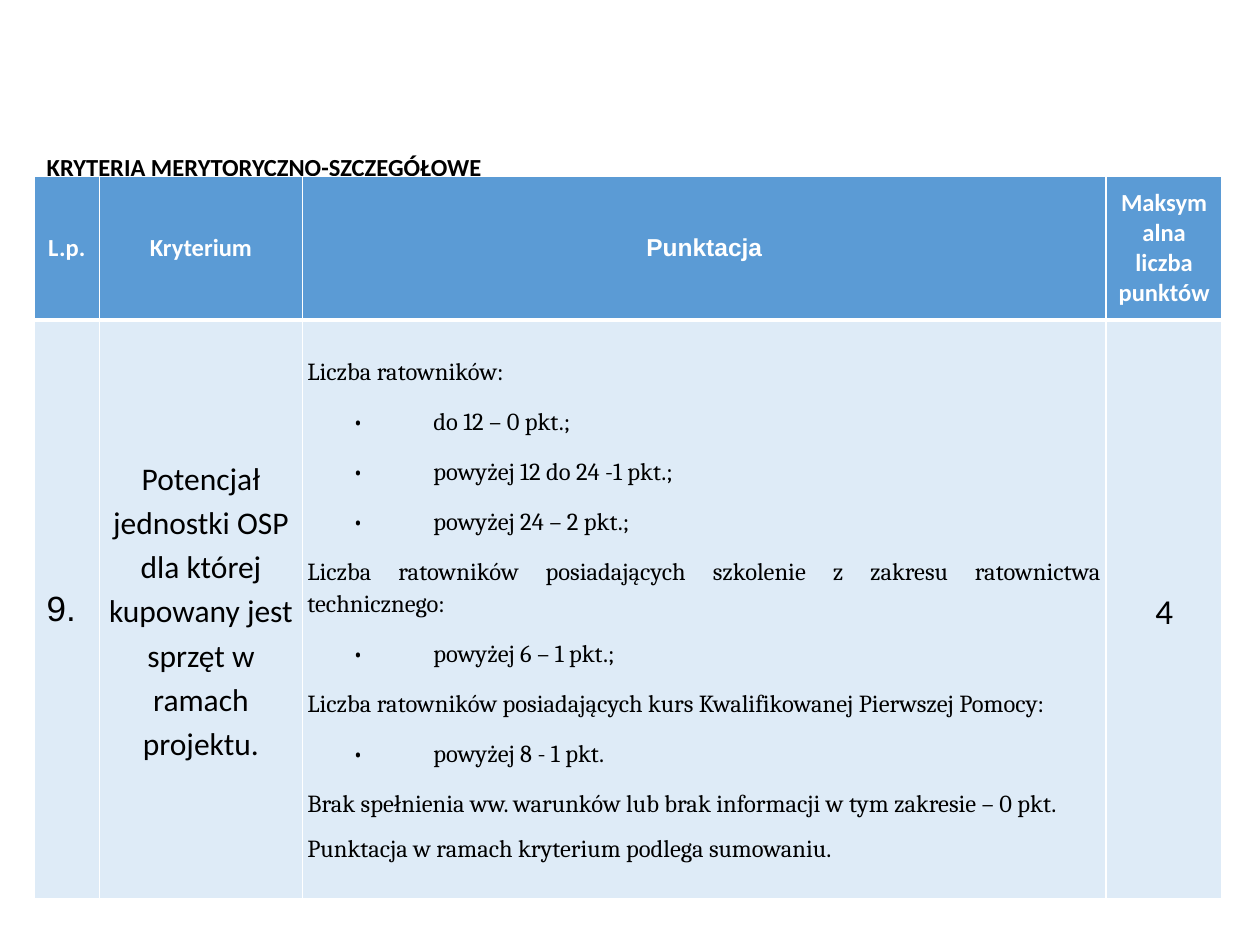
from lxml import etree
from pptx import Presentation
from pptx.dml.color import RGBColor
from pptx.enum import text as t
from pptx.oxml.ns import qn
from pptx.util import Inches, Pt

# Content
HEADING = "KRYTERIA MERYTORYCZNO-SZCZEGÓŁOWE"
HEADERS = ["L.p.", "Kryterium", "Punktacja", "Maksymalna liczba punktów"]
NUMBER = "9."
CRITERION = "Potencjał jednostki OSP dla której kupowany jest sprzęt w ramach projektu."
MAX_POINTS = "4"
SCORING = [  # (statement, bulleted thresholds)
    ("Liczba ratowników:",
     ["do 12 – 0 pkt.;", "powyżej 12 do 24 -1 pkt.;", "powyżej 24 – 2 pkt.;"]),
    ("Liczba ratowników posiadających szkolenie z zakresu ratownictwa technicznego:",
     ["powyżej 6 – 1 pkt.;"]),
    ("Liczba ratowników posiadających kurs Kwalifikowanej Pierwszej Pomocy:",
     ["powyżej 8 - 1 pkt."]),
    ("Brak spełnienia ww. warunków lub brak informacji w tym zakresie – 0 pkt.", []),
]
SUMMARY = "Punktacja w ramach kryterium podlega sumowaniu."

COLORS = {"header": "5B9BD5", "body": "DEEBF7", "white": "FFFFFF", "black": "000000"}
COLUMNS = [0.52, 1.61, 6.38, 0.92]
ROWS = [1.14, 4.59]
LEFT, TOP = 0.27, 1.4
LEFT_AL, CENTER, JUSTIFY = t.PP_ALIGN.LEFT, t.PP_ALIGN.CENTER, t.PP_ALIGN.JUSTIFY


def write(frame, text, size=14, font="Calibri", color="black", bold=False,
          align=LEFT_AL, spacing=1.0, after=0, bullet=False):
    """Fill the empty first paragraph, or add one, and format it."""
    first = frame.paragraphs[0]
    paragraph = frame.add_paragraph() if first.runs else first
    if bullet:
        props = paragraph._p.get_or_add_pPr()
        props.set("marL", str(Inches(1)))
        props.set("indent", str(Inches(-0.64)))
        etree.SubElement(props, qn("a:buFont")).set("typeface", font)
        etree.SubElement(props, qn("a:buChar")).set("char", "•")
    paragraph.alignment = align
    paragraph.line_spacing = spacing
    paragraph.space_before, paragraph.space_after = Pt(0), Pt(after)
    run = paragraph.add_run()
    run.text = text
    run.font.size, run.font.name, run.font.bold = Pt(size), font, bold
    run.font.color.rgb = RGBColor.from_string(COLORS[color])


def style_cell(cell, fill, top=1, bottom=1):
    """Centre the cell vertically, draw white borders and set the fill."""
    cell.vertical_anchor = t.MSO_ANCHOR.MIDDLE
    props = cell._tc.get_or_add_tcPr()
    for side, width in (("L", 1), ("R", 1), ("T", top), ("B", bottom)):
        line = etree.SubElement(props, qn(f"a:ln{side}"), w=str(Pt(width)))
        solid = etree.SubElement(line, qn("a:solidFill"))
        etree.SubElement(solid, qn("a:srgbClr"), val=COLORS["white"])
    cell.fill.solid()
    cell.fill.fore_color.rgb = RGBColor.from_string(COLORS[fill])


def set_margins(cell, side, vertical):
    cell.margin_left = cell.margin_right = Inches(side)
    cell.margin_top = cell.margin_bottom = Inches(vertical)


prs = Presentation()
prs.slide_width, prs.slide_height = Inches(10), Inches(7.5)
slide = prs.slides.add_slide(prs.slide_layouts[5])

# Heading
heading = slide.shapes.title
heading.left, heading.top = Inches(LEFT), Inches(1.15)
heading.width, heading.height = Inches(3.68), Inches(0.34)
heading.text_frame.word_wrap = False
heading.text_frame.auto_size = t.MSO_AUTO_SIZE.SHAPE_TO_FIT_TEXT
heading.text_frame.vertical_anchor = t.MSO_ANCHOR.MIDDLE
write(heading.text_frame, HEADING, bold=True)

# Criteria table
criteria = slide.shapes.add_table(
    len(ROWS), len(COLUMNS), Inches(LEFT), Inches(TOP),
    Inches(sum(COLUMNS)), Inches(sum(ROWS))).table
for column, width in zip(criteria.columns, COLUMNS):
    column.width = Inches(width)
for row, height in zip(criteria.rows, ROWS):
    row.height = Inches(height)

# Header row
for index, label in enumerate(HEADERS):
    cell = criteria.cell(0, index)
    style_cell(cell, "header", bottom=3)
    set_margins(cell, 0.08, 0.05)
    write(cell.text_frame, label, font="Arial" if label == "Punktacja" else "Calibri",
          color="white", bold=True, align=CENTER)

# Criterion row
number, criterion, scoring, points = [criteria.cell(1, i) for i in range(len(COLUMNS))]
for cell in (number, criterion, scoring, points):
    style_cell(cell, "body", top=3)
for cell in (criterion, scoring, points):
    set_margins(cell, 0.04, 0.04)
write(number.text_frame, NUMBER, size=20, font="Arial")
write(criterion.text_frame, CRITERION, size=18, align=CENTER, spacing=1.15)
write(points.text_frame, MAX_POINTS, size=20, align=CENTER, spacing=1.15)

# Scoring rules
rule = {"font": "Cambria", "align": JUSTIFY, "spacing": 1.15, "after": 10}
for statement, thresholds in SCORING:
    write(scoring.text_frame, statement, **rule)
    for threshold in thresholds:
        write(scoring.text_frame, threshold, bullet=True, **rule)
write(scoring.text_frame, SUMMARY, font="Cambria")

prs.save("out.pptx")
